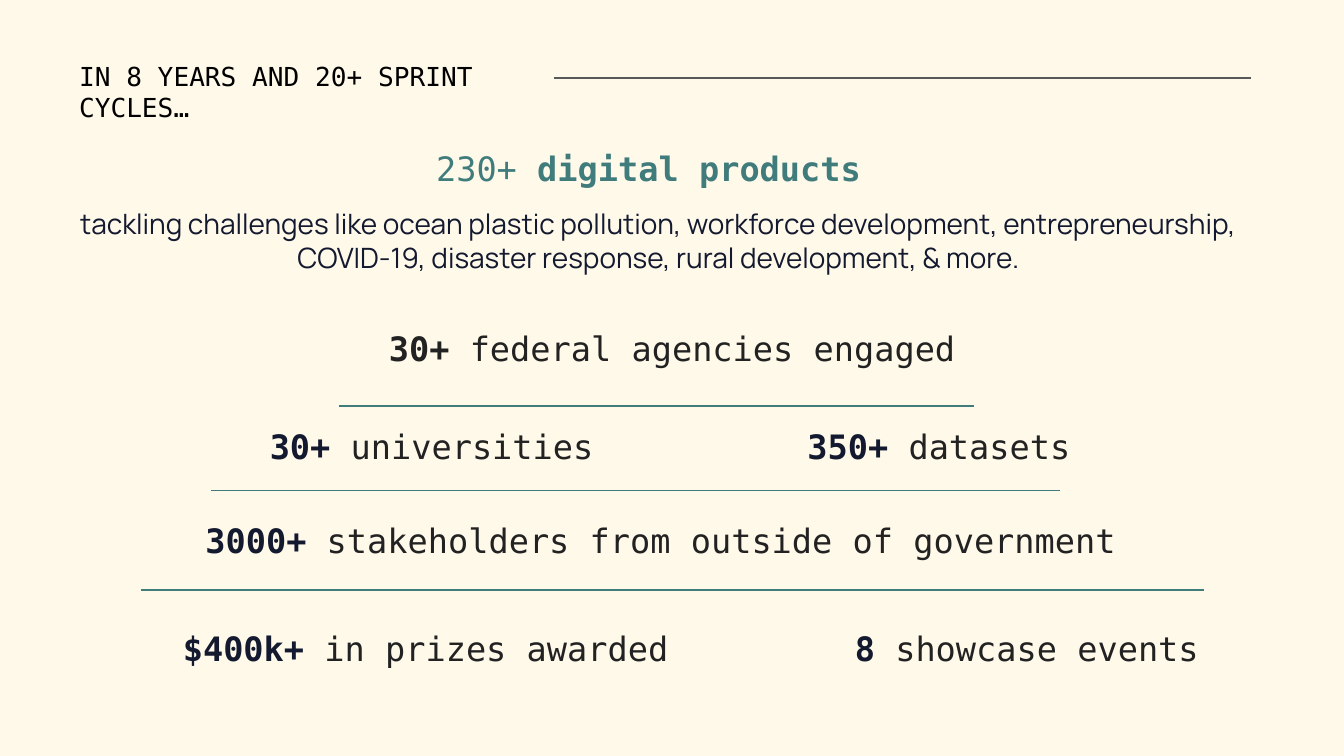
from dataclasses import dataclass

from lxml.etree import SubElement
from pptx import Presentation
from pptx.dml.color import RGBColor
from pptx.enum.shapes import MSO_CONNECTOR
from pptx.enum.text import PP_ALIGN
from pptx.oxml.ns import qn
from pptx.util import Inches, Pt


@dataclass(frozen=True)
class Theme:
    cream: RGBColor = RGBColor.from_string("FFF9EA")
    teal: RGBColor = RGBColor.from_string("417C7C")
    navy: RGBColor = RGBColor.from_string("13192F")
    charcoal: RGBColor = RGBColor.from_string("222222")
    gray: RGBColor = RGBColor.from_string("595959")
    black: RGBColor = RGBColor.from_string("000000")
    mono: str = "DejaVu Sans Mono"
    sans: str = "Manrope"
    title: Pt = Pt(14)
    stat: Pt = Pt(18)
    body: Pt = Pt(15)
    rule: Pt = Pt(0.75)


theme = Theme()

# Widescreen slide, 16:9
presentation = Presentation()
presentation.slide_width = Inches(10)
presentation.slide_height = Inches(10) * 9 // 16
slide = presentation.slides.add_slide(presentation.slide_layouts[6])
slide.background.fill.solid()
slide.background.fill.fore_color.rgb = theme.cream


def add_text_frame(left, top, width, height):
    frame = slide.shapes.add_textbox(
        Inches(left), Inches(top), Inches(width), Inches(height)).text_frame
    frame.word_wrap = True
    frame.margin_left = frame.margin_right = Inches(0.1)
    frame.margin_top = frame.margin_bottom = Inches(0.1)
    return frame


def style(paragraph, font_name, size, color=None, align=PP_ALIGN.CENTER):
    paragraph.alignment = align
    paragraph.font.name = font_name
    paragraph.font.size = size
    if color is not None:
        paragraph.font.color.rgb = color


# Rules: one beside the title, three between the rows of figures
for start, end, y, color in [
    (4.12, 9.31, 0.58, theme.gray),
    (2.52, 7.25, 3.02, theme.teal),
    (1.57, 7.89, 3.65, theme.teal),
    (1.05, 8.96, 4.39, theme.teal),
]:
    rule = slide.shapes.add_connector(
        MSO_CONNECTOR.STRAIGHT, Inches(start), Inches(y), Inches(end), Inches(y))
    rule.line.color.rgb = color
    rule.line.width = theme.rule
    SubElement(rule._element.spPr, qn("a:effectLst"))

# Title
title = add_text_frame(0.49, 0.35, 3.97, 0.44).paragraphs[0]
title.text = "IN 8 YEARS AND 20+ SPRINT CYCLES…"
style(title, theme.mono, theme.title, theme.black, PP_ALIGN.LEFT)

# Headline figure and the challenges behind it
headline_frame = add_text_frame(0.49, 1, 8.82, 1.15)
headline = headline_frame.paragraphs[0]
style(headline, theme.mono, theme.stat, theme.teal)
headline.add_run().text = "230+ "
products = headline.add_run()
products.text = "digital products "
products.font.bold = True

challenges = headline_frame.add_paragraph()
challenges.text = (
    "tackling challenges like ocean plastic pollution, workforce development, "
    "entrepreneurship, COVID-19, disaster response, rural development, & more.")
challenges.space_before = Pt(10)
style(challenges, theme.sans, theme.body, theme.navy)

# Rows of figures: each bold number is followed by its label
for left, top, width, number_color, figures in [
    (0.34, 2.34, 9.32, theme.charcoal, [("30+ ", "federal agencies engaged")]),
    (1.29, 3.07, 7.39, theme.navy,
     [("30+ ", "universities\t\t"), ("350+ ", "datasets")]),
    (0.62, 3.77, 8.74, theme.navy,
     [("3000+ ", "stakeholders from outside of government ")]),
    (0.62, 4.57, 9.04, theme.navy,
     [("$400k+ ", "in prizes awarded\t\t"), ("8 ", "showcase events")]),
]:
    row = add_text_frame(left, top, width, 0.5).paragraphs[0]
    style(row, theme.mono, theme.stat)
    # Tab stops every inch set the gap between two figures
    row._p.get_or_add_pPr().set("defTabSz", str(Inches(1)))
    for number, label in figures:
        for words, color, bold in [(number, number_color, True),
                                   (label, theme.charcoal, False)]:
            run = row.add_run()
            run.text = words
            run.font.bold = bold
            run.font.color.rgb = color

presentation.save("out.pptx")
